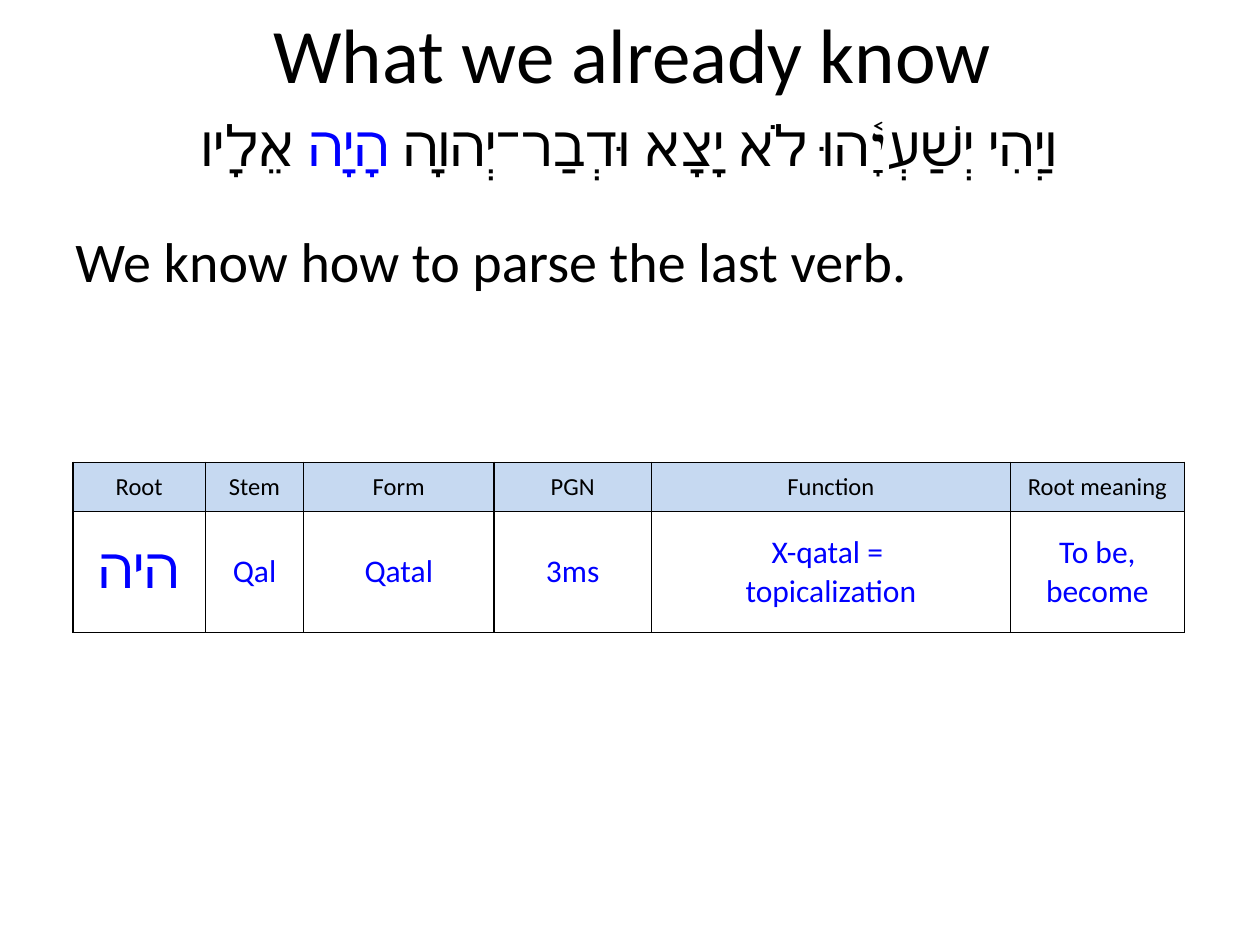
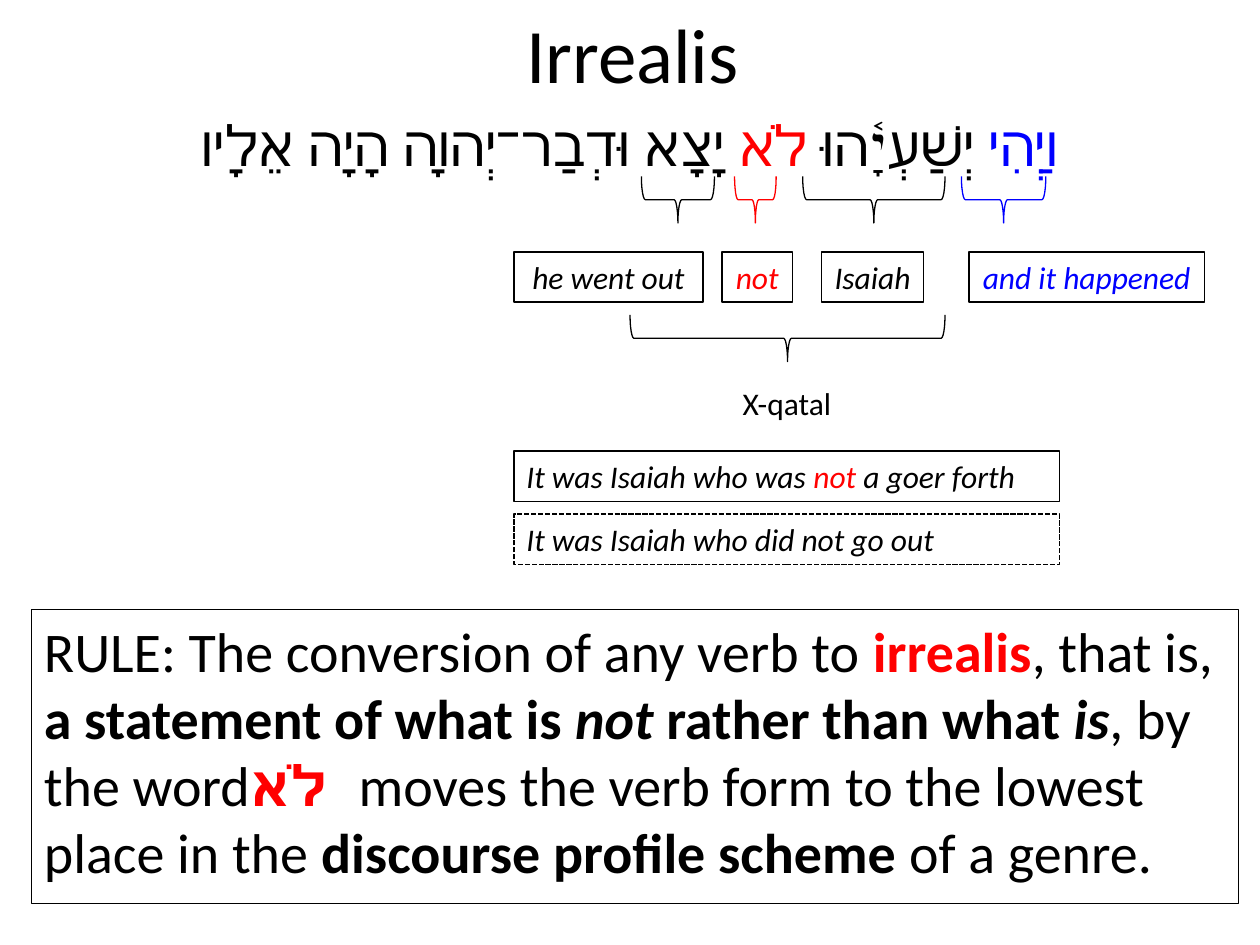
from dataclasses import dataclass

from lxml import etree
from pptx import Presentation
from pptx import util as u
from pptx.dml.color import RGBColor
from pptx.enum import dml, shapes, text
from pptx.oxml import ns


@dataclass(frozen=True)
class Theme:
    font: str = "Calibri"
    black: str = "000000"
    blue: str = "0000FF"
    red: str = "FF0000"
    header_fill: str = "C6D9F1"
    title: int = 44
    body: int = 32
    label: int = 18
    table_header: int = 14
    outline: float = 1
    thin: float = 0.75
    space_before: int = 20


THEME = Theme()
CENTER = text.PP_ALIGN.CENTER
LEFT = text.PP_ALIGN.LEFT
MIDDLE = text.MSO_ANCHOR.MIDDLE
ITALIC = {"italic": True}
BOLD = {"bold": True}
BOLD_ITALIC = {"bold": True, "italic": True}
BLUE = {"color": THEME.blue}
RED = {"color": THEME.red}


def inches(*lengths):
    return [u.Inches(length) for length in lengths]


def add_span(para, words, size, color=THEME.black, **formats):
    span = para.add_run()
    span.text = words
    values = {"name": THEME.font, "size": u.Pt(size), "bold": False, "italic": False}
    for name, value in {**values, **formats}.items():
        setattr(span.font, name, value)
    span.font.color.rgb = RGBColor.from_string(color)


def write_para(para, spans, size, align=LEFT, rtl=False, spaced=False):
    para.alignment = align
    properties = para._p.get_or_add_pPr()
    if rtl:
        properties.set("rtl", "1")
    if spaced:
        before = etree.SubElement(properties, ns.qn("a:spcBef"))
        percent = etree.SubElement(before, ns.qn("a:spcPct"))
        percent.set("val", str(THEME.space_before * 1000))
    for words, formats in spans:
        add_span(para, words, size, **formats)


def set_frame(frame, wrap=True, anchor=text.MSO_ANCHOR.TOP):
    values = {"word_wrap": wrap, "vertical_anchor": anchor}
    for name, value in values.items():
        setattr(frame, name, value)


def add_text(page, place, spans, size, anchor=text.MSO_ANCHOR.TOP, **layout):
    box = page.shapes.add_textbox(*inches(*place))
    set_frame(box.text_frame, anchor=anchor)
    write_para(box.text_frame.paragraphs[0], spans, size, **layout)


def set_outline(shape, color, width):
    shape.shadow.inherit = False
    shape.fill.background()
    shape.line.color.rgb = RGBColor.from_string(color)
    shape.line.width = u.Pt(width)


def add_frame(page, place, spans, size=THEME.label, width=THEME.outline,
              dashed=False, wrap=True, **layout):
    box = page.shapes.add_shape(shapes.MSO_SHAPE.RECTANGLE, *inches(*place))
    set_outline(box, THEME.black, width)
    if dashed:
        box.line.dash_style = dml.MSO_LINE.SQUARE_DOT
    set_frame(box.text_frame, wrap=wrap)
    write_para(box.text_frame.paragraphs[0], spans, size, **layout)


def add_brace(page, left, top, span_width, color=THEME.black, depth=0.37):
    shift = (span_width - depth) / 2
    place = inches(left + shift, top - shift, depth, span_width)
    brace = page.shapes.add_shape(shapes.MSO_SHAPE.RIGHT_BRACE, *place)
    brace.rotation = 90
    set_outline(brace, color, THEME.thin)


def set_borders(cell):
    properties = cell._tc.get_or_add_tcPr()
    for side in ("lnL", "lnR", "lnT", "lnB"):
        line = etree.SubElement(properties, ns.qn(f"a:{side}"), w=str(u.Pt(THEME.outline)))
        fill = etree.SubElement(line, ns.qn("a:solidFill"))
        etree.SubElement(fill, ns.qn("a:srgbClr"), val=THEME.black)


def fill_cell(cell, lines, size, color, fill=None):
    set_borders(cell)
    cell.vertical_anchor = MIDDLE
    if fill:
        cell.fill.solid()
        cell.fill.fore_color.rgb = RGBColor.from_string(fill)
    else:
        cell.fill.background()
    for index, words in enumerate(lines):
        frame = cell.text_frame
        para = frame.add_paragraph() if index else frame.paragraphs[0]
        write_para(para, [(words, {"color": color})], size, CENTER)


def add_parsing_table(page, left, top, columns, heights):
    widths = [column[0] for column in columns]
    place = inches(left, top, sum(widths), sum(heights))
    table = page.shapes.add_table(len(heights), len(columns), *place).table
    table.first_row = table.horz_banding = False
    for row, height in zip(table.rows, heights):
        row.height = u.Inches(height)
    for index, (width, heading, lines, size) in enumerate(columns):
        table.columns[index].width = u.Inches(width)
        fill_cell(table.cell(0, index), [heading], THEME.table_header,
                  THEME.black, THEME.header_fill)
        fill_cell(table.cell(1, index), lines, size, THEME.blue)


def add_page(deck, title, verse):
    page = deck.slides.add_slide(deck.slide_layouts[6])
    add_text(page, (0.52, 0, 9, 0.83), [(title, {})], THEME.title, MIDDLE, align=CENTER)
    add_text(page, (0, 0.83, 10, 0.75), verse, THEME.body,
             align=CENTER, rtl=True, spaced=True)
    return page


def build_review(deck):
    page = add_page(deck, "What we already know", [
        ("וַיְהִי יְשַׁעְיָ֫הוּ לֹא יָצָא וּדְבַר־יְהוָה ", {}),
        ("הָיָה", BLUE),
        (" אֵלָיו", {}),
    ])
    add_text(page, (0.5, 1.75, 9, 0.83), [("We know how to parse the last verb.", {})],
             THEME.body, spaced=True)
    columns = [
        (1.05, "Root", ["היה"], THEME.body),
        (0.78, "Stem", ["Qal"], THEME.label),
        (1.51, "Form", ["Qatal"], THEME.label),
        (1.25, "PGN", ["3ms"], THEME.label),
        (2.85, "Function", ["X-qatal = ", "topicalization"], THEME.label),
        (1.38, "Root meaning", ["To be,", "become"], THEME.label),
    ]
    add_parsing_table(page, 0.58, 3.67, columns, (0.39, 0.96))


def build_irrealis(deck):
    page = add_page(deck, "Irrealis", [
        ("וַיְהִי", BLUE),
        (" יְשַׁעְיָ֫הוּ ", {}),
        ("לֹא", RED),
        (" יָצָא וּדְבַר־יְהוָה הָיָה אֵלָיו", {}),
    ])
    glosses = [
        ("and it happened", THEME.blue, 7.69, 1.87, 7.63, 0.67),
        ("Isaiah", THEME.black, 6.52, 0.81, 6.37, 1.13),
        ("not", THEME.red, 5.73, 0.56, 5.83, 0.33),
        ("he went out", THEME.black, 4.08, 1.5, 5.09, 0.58),
    ]
    for words, color, left, width, brace_left, brace_width in glosses:
        add_frame(page, (left, 2, width, 0.4), [(words, {"color": color, **ITALIC})],
                  wrap=False, align=CENTER)
        add_brace(page, brace_left, 1.4, brace_width, color)
    add_brace(page, 5, 2.5, 2.5)
    add_text(page, (4.87, 3, 2.75, 0.4), [("X-qatal", {})], THEME.label, align=CENTER)

    add_frame(page, (4.08, 3.58, 4.33, 0.4), [
        ("It was Isaiah who was ", ITALIC),
        ("not", {**RED, **ITALIC}),
        (" a goer forth", ITALIC),
    ])
    add_frame(page, (4.08, 4.08, 4.33, 0.4),
              [("It was Isaiah who did not go out", ITALIC)], dashed=True)
    add_frame(page, (0.25, 4.84, 9.58, 2.33), [
        ("RULE: The conversion of any verb to ", {}),
        ("irrealis", {**RED, **BOLD}),
        (", that is, ", {}),
        ("a statement of what is ", BOLD),
        ("not", BOLD_ITALIC),
        (" rather than what ", BOLD),
        ("is", BOLD_ITALIC),
        (", by the word", {}),
        ("לֹא  ", {**RED, **BOLD}),
        ("moves the verb form to the lowest place in the ", {}),
        ("discourse profile scheme ", BOLD),
        ("of a genre.", {}),
    ], THEME.body, THEME.thin, spaced=True)


def main():
    deck = Presentation()
    deck.slide_width, deck.slide_height = inches(10, 7.5)
    build_review(deck)
    build_irrealis(deck)
    deck.save("out.pptx")


if __name__ == "__main__":
    main()
